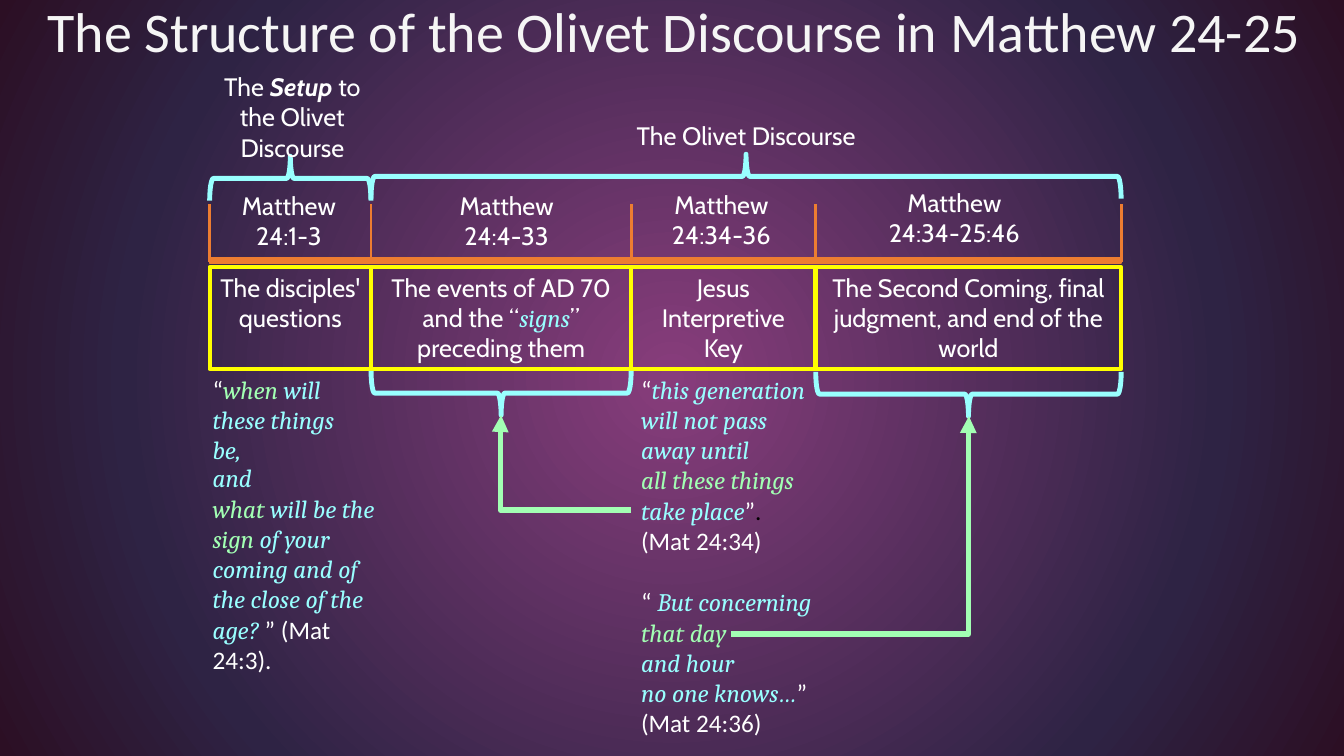
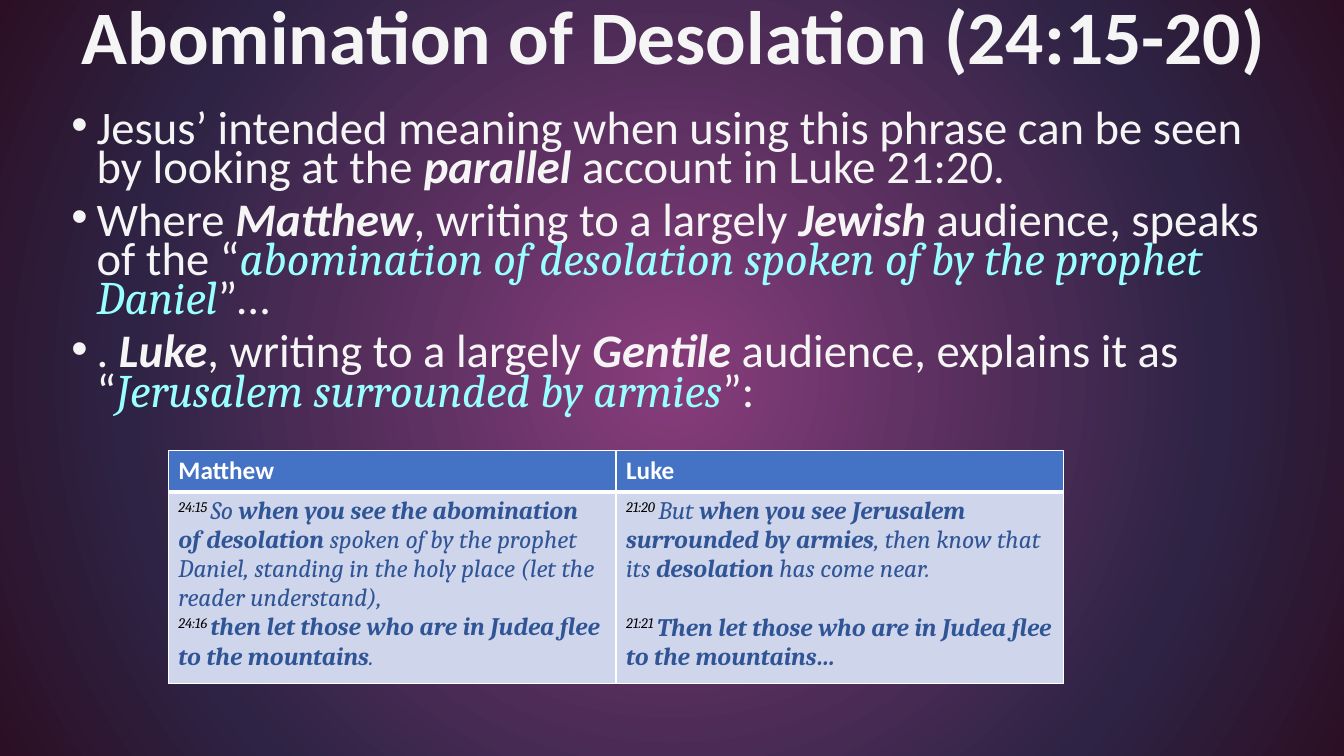
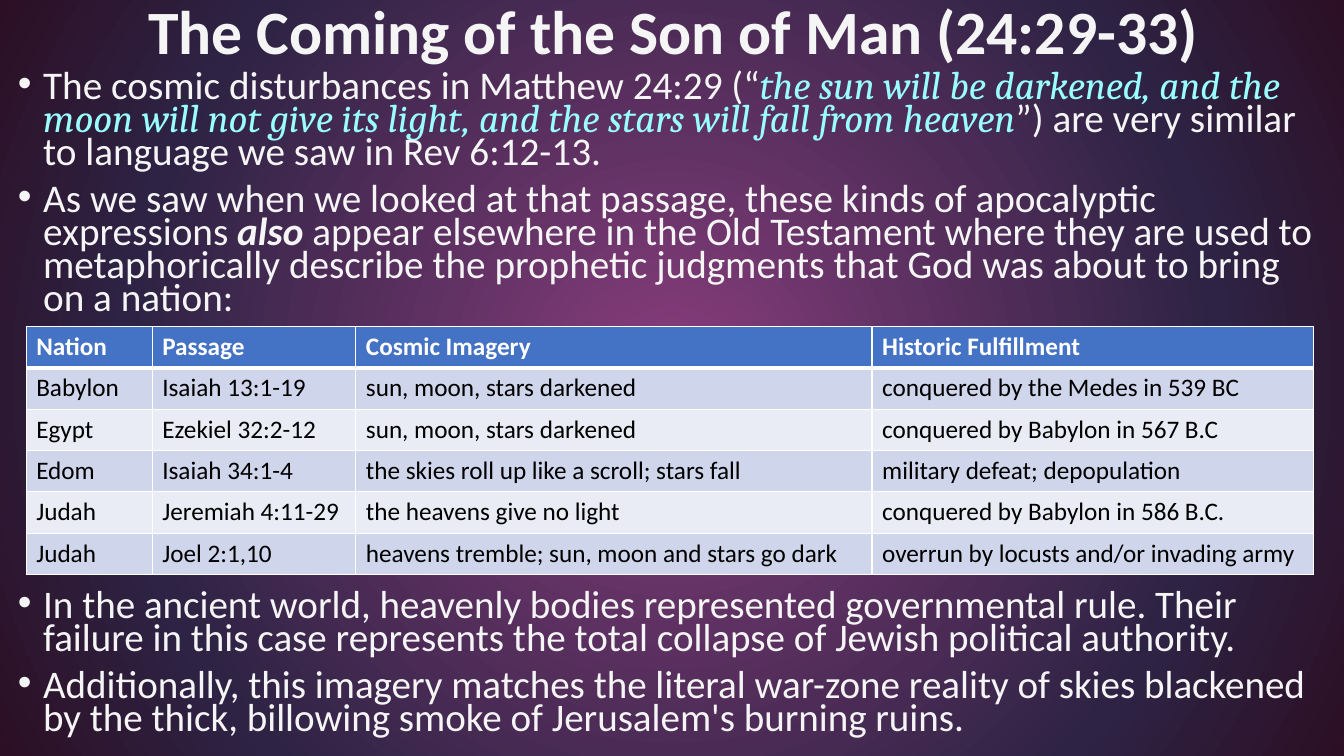
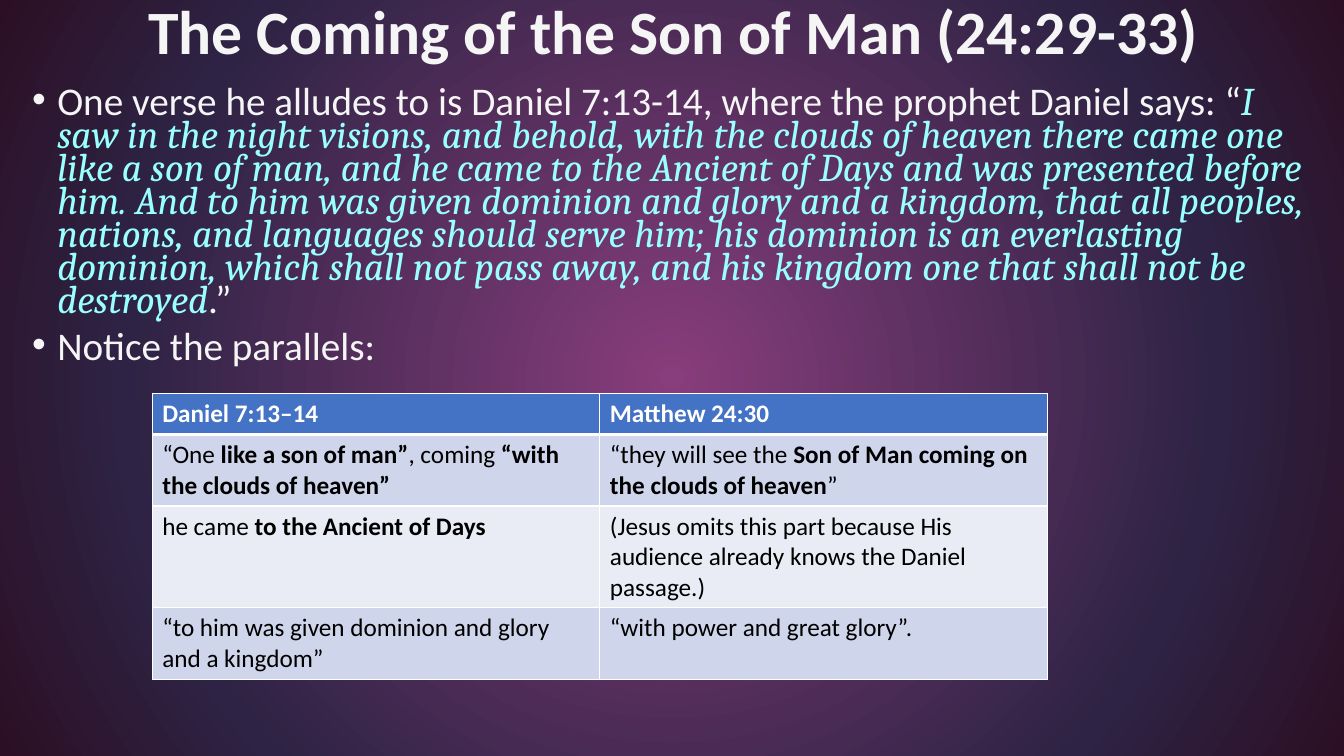
from lxml import etree
from pptx import Presentation
from pptx.dml.color import RGBColor
from pptx.enum import dml, shapes, text
from pptx.oxml import ns, parse_xml
from pptx.util import Inches, Pt

COLORS = {
    "title": "F5F5F5", "white": "FFFFFF", "black": "000000", "cyan": "99FFFF",
    "green": "A2FFB3", "orange": "ED7D31", "yellow": "FFFF00", "verse": "2F5597",
    "header": "4472C4", "band": "CFD5EA", "pale": "E9EBF5",
}
BACKGROUND_STOPS = [(0, "883D7C"), (71, "2E2344"), (100, "2C0F24")]

# Run styles; a run that is a plain string takes the base style of its box
SCRIPTURE = dict(font="Cambria", italic=True)
STYLES = {
    "body": dict(font="Calibri", color="title"),
    "label": dict(font="Cabin", color="white"),
    "source": dict(font="Calibri", color="white"),
    "header": dict(font="Calibri", color="white", bold=True),
    "cell": dict(font="Calibri", color="black"),
    "strong": dict(bold=True),
    "emphasis": dict(bold=True, italic=True),
    "black": dict(color="black"),
    "quote": dict(SCRIPTURE, color="cyan"),
    "key": dict(SCRIPTURE, color="green"),
    "verse": dict(SCRIPTURE, color="verse"),
    "verse strong": dict(SCRIPTURE, color="verse", bold=True),
    "number": dict(SCRIPTURE, color="black", baseline=30000),
}

# Slide 1: column edges, then (left, top, width, reference) and box text per column
EDGES = [2.08, 3.68, 6.26, 8.09, 11.12]
REFERENCES = [
    (2.25, 1.84, 1.23, "Matthew 24:1-3"),
    (4.41, 1.84, 1.23, "Matthew 24:4-33"),
    (6.54, 1.83, 1.23, "Matthew 24:34-36"),
    (8.71, 1.81, 1.51, "Matthew 24:34-25:46"),
]
TOPICS = [
    ["The disciples' questions"],
    ["The events of AD 70 and the “", ("signs", "quote"), "” preceding them"],
    ["Jesus Interpretive Key"],
    ["The Second Coming, final judgment, and end of the world"],
]
HEADINGS = [
    ((2.08, 0.66, 1.64, 1.01), ["The ", ("Setup", "emphasis"), " to the Olivet Discourse"]),
    ((3.68, 1.14, 7.44, 0.4), ["The Olivet Discourse"]),
]
QUOTES = [
    ((2.01, 3.66, 1.67, 1.01), [
        ["“", ("when", "key"), (" will these things be,", "quote")],
    ]),
    ((2.01, 4.54, 1.87, 2.22), [
        [("and", "quote")],
        [("what", "key"), (" will be the ", "quote"), ("sign", "key"),
         (" of your coming and of the close of the age?", "quote"), " ” (Mat 24:3)."],
    ]),
    ((6.26, 3.66, 1.83, 2.22), [
        ["“", ("this generation will not pass away until", "quote")],
        [("all these things ", "key"), ("take place", "quote"), "”", (".", "black")],
        ["(Mat 24:34)"],
    ]),
    ((6.26, 5.77, 1.97, 1.62), [
        ["“ ", ("But concerning ", "quote"), ("that day", "key")],
        [("and hour", "quote")],
        [("no one knows…", "quote"), "” (Mat 24:36)"],
    ]),
]
BRACES = [  # first edge, last edge, top, rotation
    (0, 1, 1.55, 270), (1, 4, 1.53, 270), (1, 2, 3.68, 90), (3, 4, 3.69, 90),
]
ARROWS = [  # start, end, bend in thousandths of a percent
    ((6.26, 5.06), (4.97, 4.12), 100600), ((7.25, 6.29), (9.61, 4.13), 99800),
]

# Slides 2 to 4: title, bullet boxes and table
STUDIES = [
    dict(
        title="Abomination of Desolation (24:15-20)", title_size=54, title_height=0.79,
        bullets=[((0.61, 1.07, 12.12, 3.24), 33.3, [
            ["Jesus’ intended meaning when using this phrase can be seen by looking at the ",
             ("parallel", "emphasis"), " account in Luke 21:20."],
            ["Where ", ("Matthew", "emphasis"), ", writing to a largely ",
             ("Jewish", "emphasis"), " audience, speaks of the “",
             ("abomination of desolation spoken of by the prophet Daniel", "quote"), "”…"],
            [". ", ("Luke", "emphasis"), ", writing to a largely ", ("Gentile", "emphasis"),
             " audience, explains it as “", ("Jerusalem surrounded by armies", "quote"), "”:"],
        ])],
        table=dict(
            place=(1.67, 4.47), columns=[4.44, 4.44], rows=[0.41, 1.84], gap=[0, 21],
            cells=[
                ["Matthew", "Luke"],
                [[[("24:15 ", "number"), ("So ", "verse"),
                   ("when you see the abomination of desolation", "verse strong"),
                   (" spoken of by the prophet Daniel, standing in the holy place "
                    "(let the reader understand),", "verse")],
                  [("24:16 ", "number"),
                   ("then let those who are in Judea flee to the mountains", "verse strong"),
                   (".", "verse")]],
                 [[("21:20 ", "number"), ("But ", "verse"),
                   ("when you see Jerusalem surrounded by armies", "verse strong"),
                   (", then know that its ", "verse"), ("desolation", "verse strong"),
                   (" has come near.", "verse")],
                  [("21:21 ", "number"),
                   ("Then let those who are in Judea flee to the mountains…",
                    "verse strong")]]],
            ]),
    ),
    dict(
        title="The Coming of the Son of Man (24:29-33)", title_size=44, title_height=0.68,
        bullets=[
            ((0.08, 0.68, 13.12, 2.56), 28, [
                ["The cosmic disturbances in Matthew 24:29 (“",
                 ("the sun will be darkened, and the moon will not give its light, "
                  "and the stars will fall from heaven", "quote"),
                 "”) are very similar to language we saw in Rev 6:12-13."],
                ["As we saw when we looked at that passage, these kinds of apocalyptic "
                 "expressions ", ("also", "emphasis"),
                 " appear elsewhere in the Old Testament where they are used to "
                 "metaphorically describe the prophetic judgments that God was about to "
                 "bring on a nation:"],
            ]),
            ((0.08, 5.83, 13.12, 1.67), 27.9, [
                ["In the ancient world, heavenly bodies represented governmental rule. Their "
                 "failure in this case represents the total collapse of Jewish political "
                 "authority."],
                ["Additionally, this imagery matches the literal war-zone reality of skies "
                 "blackened by the thick, billowing smoke of Jerusalem's burning ruins."],
            ]),
        ],
        table=dict(
            place=(0.26, 3.24), columns=[1.25, 2.02, 5.12, 4.38], rows=[0.41] * 6,
            cells=[
                ["Nation", "Passage", "Cosmic Imagery", "Historic Fulfillment"],
                ["Babylon", "Isaiah 13:1-19", "sun, moon, stars darkened",
                 "conquered by the Medes in 539 BC"],
                ["Egypt", "Ezekiel 32:2-12", "sun, moon, stars darkened",
                 "conquered by Babylon in 567 B.C"],
                ["Edom", "Isaiah 34:1-4", "the skies roll up like a scroll; stars fall",
                 "military defeat; depopulation"],
                ["Judah", "Jeremiah 4:11-29", "the heavens give no light",
                 "conquered by Babylon in 586 B.C."],
                ["Judah", "Joel 2:1,10", "heavens tremble; sun, moon and stars go dark",
                 "overrun by locusts and/or invading army"],
            ]),
    ),
    dict(
        title="The Coming of the Son of Man (24:29-33)", title_size=44, title_height=0.68,
        bullets=[((0.22, 0.84, 12.86, 3.06), 28, [
            ["One verse he alludes to is Daniel 7:13-14, where the prophet Daniel says: “",
             ("I saw in the night visions, and behold, with the clouds of heaven there came "
              "one like a son of man, and he came to the Ancient of Days and was presented "
              "before him. And to him was given dominion and glory and a kingdom, that all "
              "peoples, nations, and languages should serve him; his dominion is an "
              "everlasting dominion, which shall not pass away, and his kingdom one that "
              "shall not be destroyed", "quote"), ".”"],
            ["Notice the parallels:"],
        ])],
        table=dict(
            place=(1.51, 3.9), columns=[4.44, 4.44], rows=[0.41, 0.71, 1.01, 0.71],
            cells=[
                ["Daniel 7:13–14", "Matthew 24:30"],
                [[["“One ", ("like a son of man”", "strong"), ", coming",
                   (" “with the clouds of heaven”", "strong")]],
                 [["“they will see the ",
                   ("Son of Man coming on the clouds of heaven", "strong"), "”"]]],
                [[["he came ", ("to the Ancient of Days", "strong")]],
                 "(Jesus omits this part because His audience already knows the Daniel "
                 "passage.)"],
                ["“to him was given dominion and glory and a kingdom”",
                 "“with power and great glory”."],
            ]),
    ),
]


def rgb(name):
    return RGBColor.from_string(COLORS[name])


def inches(values):
    return [Inches(value) for value in values]


# Text
def write(frame, paragraphs, base, size, align=None, bullet=False, gaps=()):
    """Fill a text frame with paragraphs, each a list of strings or (string, style) runs."""
    for index, runs in enumerate(paragraphs):
        para = frame.add_paragraph() if index else frame.paragraphs[0]
        if bullet:
            props = para._p.get_or_add_pPr()
            props.set("marL", str(Inches(0.25)))
            props.set("indent", str(-Inches(0.25)))
            etree.SubElement(props, ns.qn("a:buFont")).set("typeface", "Arial")
            etree.SubElement(props, ns.qn("a:buChar")).set("char", "•")
            para.line_spacing = 0.7
        if index and (bullet or gaps):
            para.space_before = Pt(10 if bullet else gaps[index])
        para.alignment = align
        for run in runs:
            words, style = (run, base) if isinstance(run, str) else run
            look = {**STYLES[base], **STYLES[style]}
            span = para.add_run()
            span.text = words
            span.font.name, span.font.size = look["font"], Pt(size)
            span.font.color.rgb = rgb(look["color"])
            span.font.bold = look.get("bold", False)
            span.font.italic = look.get("italic", False)
            if "baseline" in look:
                span.font._element.set("baseline", str(look["baseline"]))


def add_text(page, place, paragraphs, base, size=18, **options):
    box = page.shapes.add_textbox(*inches(place))
    box.text_frame.word_wrap = True
    write(box.text_frame, paragraphs, base, size, **options)


def add_page(deck, title, size, height, bold=True):
    page = deck.slides.add_slide(deck.slide_layouts[5])
    box = page.shapes.title
    box.left, box.top, box.width, box.height = inches((0, 0, 13.37, height))
    frame = box.text_frame
    frame.auto_size = text.MSO_AUTO_SIZE.NONE
    frame.vertical_anchor = text.MSO_ANCHOR.MIDDLE
    frame.text = title
    para = frame.paragraphs[0]
    para.alignment, para.line_spacing = text.PP_ALIGN.CENTER, 0.9
    font = para.runs[0].font
    font.name, font.size, font.bold = "Calibri", Pt(size), bold
    font.color.rgb = rgb("title")
    return page


# Shapes
def add_shape(page, kind, place, color, width, filled=False):
    shape = page.shapes.add_shape(kind, *inches(place))
    shape.shadow.inherit = False
    if filled:
        shape.fill.solid()
        shape.fill.fore_color.rgb = rgb(color)
    else:
        shape.fill.background()
    shape.line.color.rgb, shape.line.width = rgb(color), Pt(width)
    return shape


def add_line(page, kind, start, end, color, width):
    line = page.shapes.add_connector(kind, *inches(start + end))
    line.line.color.rgb, line.line.width = rgb(color), Pt(width)
    etree.SubElement(line._element.spPr, ns.qn("a:effectLst"))
    return line


def add_brace(page, left, right, top, rotation, depth=0.44):
    """A brace lying on its side: it spans left to right and is depth high."""
    span = right - left
    place = ((left + right - depth) / 2, top + (depth - span) / 2, depth, span)
    brace = add_shape(page, shapes.MSO_SHAPE.RIGHT_BRACE, place, "cyan", 3.5)
    brace.rotation = rotation


def add_elbow_arrow(page, start, end, bend):
    arrow = add_line(page, shapes.MSO_CONNECTOR.ELBOW, start, end, "green", 4)
    guides = arrow._element.spPr.find(ns.qn("a:prstGeom")).get_or_add_avLst()
    guide = etree.SubElement(guides, ns.qn("a:gd"))
    guide.set("name", "adj1")
    guide.set("fmla", f"val {bend}")
    etree.SubElement(arrow.line._get_or_add_ln(), ns.qn("a:tailEnd")).set("type", "triangle")


# Tables
def add_borders(cell, header):
    props = cell._tc.get_or_add_tcPr()
    for index, side in enumerate(("lnL", "lnR", "lnT", "lnB")):
        width = Pt(3 if header and side == "lnB" else 1)
        props.insert(index, parse_xml(
            f'<a:{side} {ns.nsdecls("a")} w="{width}"><a:solidFill>'
            f'<a:srgbClr val="{COLORS["white"]}"/></a:solidFill></a:{side}>'))


def add_table(page, place, columns, rows, cells, gap=()):
    """Draw a table; gap gives the space before a column's later paragraphs."""
    table = page.shapes.add_table(
        len(rows), len(columns), *inches((*place, sum(columns), sum(rows)))).table
    for column, width in zip(table.columns, columns):
        column.width = Inches(width)
    for r, (height, entries) in enumerate(zip(rows, cells)):
        table.rows[r].height = Inches(height)
        for c, entry in enumerate(entries):
            cell = table.cell(r, c)
            cell.fill.solid()
            cell.fill.fore_color.rgb = rgb("header" if r == 0 else ("pale", "band")[r % 2])
            add_borders(cell, r == 0)
            paragraphs = [[entry]] if isinstance(entry, str) else entry
            gaps = [gap[c]] * len(paragraphs) if gap else ()
            write(cell.text_frame, paragraphs, "cell" if r else "header", 18, gaps=gaps)


# Slides
def set_background(master):
    master.background.fill.solid()
    props = master._element.find(".//" + ns.qn("p:bgPr"))
    stops = "".join(f'<a:gs pos="{at * 1000}"><a:srgbClr val="{color}"/></a:gs>'
                    for at, color in BACKGROUND_STOPS)
    props.replace(props[0], parse_xml(
        f'<a:gradFill {ns.nsdecls("a")} rotWithShape="1"><a:gsLst>{stops}</a:gsLst>'
        '<a:path path="circle"><a:fillToRect l="50000" t="50000" r="50000" b="50000"/>'
        '</a:path></a:gradFill>'))


def add_structure(deck):
    page = add_page(deck, "The Structure of the Olivet Discourse in Matthew 24-25",
                    40, 0.69, bold=False)
    center = text.PP_ALIGN.CENTER

    # Timeline with its ticks
    add_shape(page, shapes.MSO_SHAPE.RECTANGLE,
              (EDGES[0], 2.56, EDGES[-1] - EDGES[0], 0.05), "orange", 1, filled=True)
    for edge in EDGES:
        add_line(page, shapes.MSO_CONNECTOR.STRAIGHT, (edge, 2.6), (edge, 2.02), "orange", 2)
    for left, top, width, reference in REFERENCES:
        add_text(page, (left, top, width, 0.71), [[reference]], "label", align=center)

    # Topic boxes
    for left, right, topic in zip(EDGES, EDGES[1:], TOPICS):
        box = add_shape(page, shapes.MSO_SHAPE.RECTANGLE, (left, 2.65, right - left, 1.01),
                        "yellow", 3)
        box.text_frame.word_wrap = True
        box.text_frame.vertical_anchor = text.MSO_ANCHOR.TOP
        write(box.text_frame, [topic], "label", 18, align=center)

    # Braces, quotations and arrows
    for first, last, top, rotation in BRACES:
        add_brace(page, EDGES[first], EDGES[last], top, rotation)
    for place, heading in HEADINGS:
        add_text(page, place, [heading], "label", align=center)
    for place, quotation in QUOTES:
        add_text(page, place, quotation, "source")
    for start, end, bend in ARROWS:
        add_elbow_arrow(page, start, end, bend)


def add_study(deck, study):
    page = add_page(deck, study["title"], study["title_size"], study["title_height"])
    for place, size, bullets in study["bullets"]:
        add_text(page, place, bullets, "body", size, bullet=True)
    add_table(page, **study["table"])


def main():
    deck = Presentation()
    deck.slide_width, deck.slide_height = Inches(13.33), Inches(7.5)
    set_background(deck.slide_master)
    add_structure(deck)
    for study in STUDIES:
        add_study(deck, study)
    deck.save("out.pptx")


if __name__ == "__main__":
    main()
